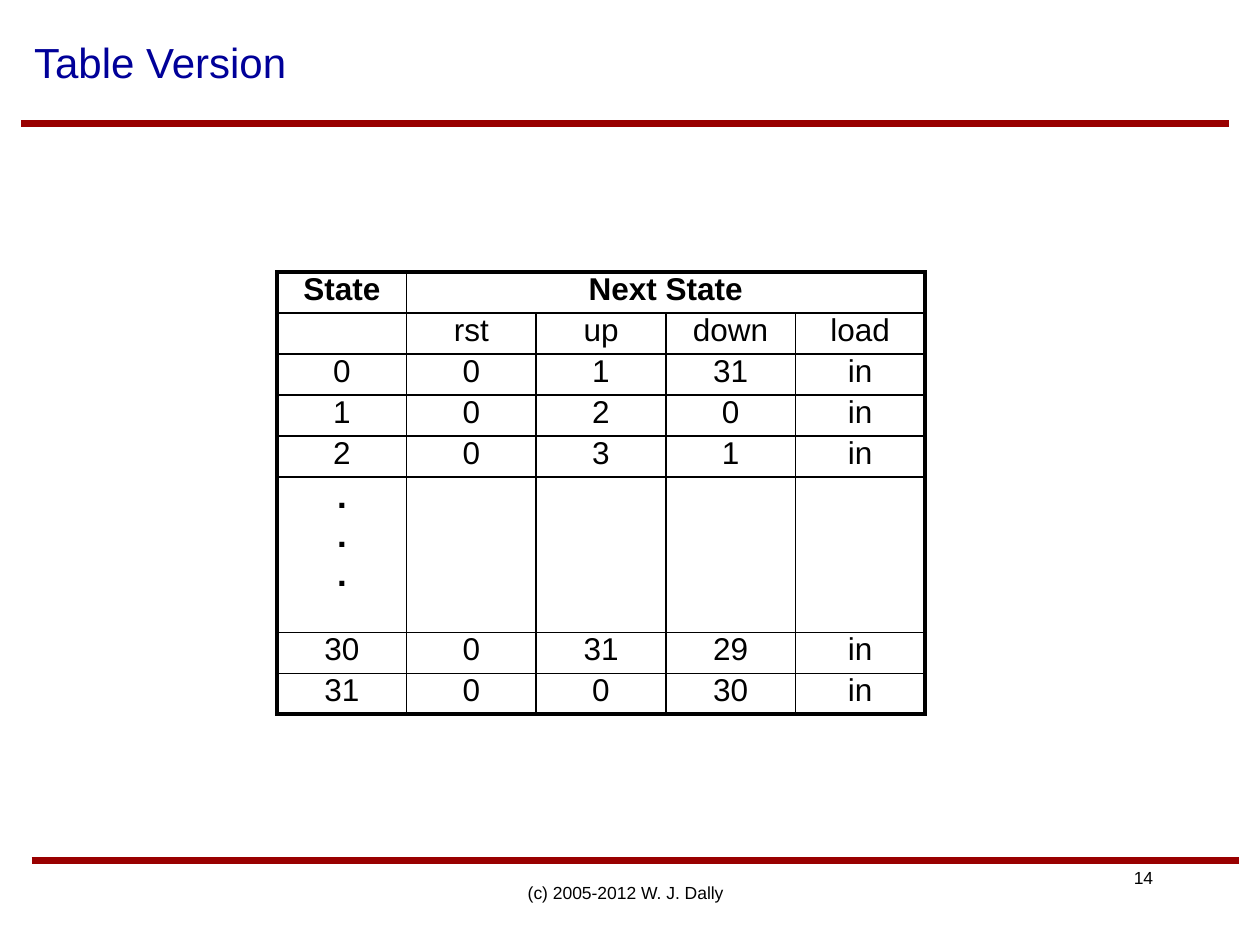
"""Build the "Table Version" slide with a counter's next-state table."""
from lxml import etree
from pptx import Presentation
from pptx.dml.color import RGBColor
from pptx.enum.shapes import MSO_CONNECTOR
from pptx.enum.text import MSO_ANCHOR, PP_ALIGN
from pptx.oxml.ns import qn
from pptx.util import Inches, Pt

LEFT, CENTER, RIGHT = PP_ALIGN.LEFT, PP_ALIGN.CENTER, PP_ALIGN.RIGHT
TOP, MIDDLE = MSO_ANCHOR.TOP, MSO_ANCHOR.MIDDLE
STRAIGHT = MSO_CONNECTOR.STRAIGHT
BLACK = RGBColor(0x00, 0x00, 0x00)
NAVY = RGBColor(0x00, 0x00, 0x99)
DARK_RED = RGBColor(0x99, 0x00, 0x00)

TITLE = ("Table Version", (0.17, 0, 9.83, 0.98))
PAGE_NUMBER = ("14", (7.5, 6.83, 1.75, 0.27), RIGHT, TOP)
COPYRIGHT = ("(c) 2005-2012 W. J. Dally", (3.38, 6.83, 3.17, 0.5), CENTER, MIDDLE)
RULES = [(0.17, 0.98), (0.25, 6.83)]
RULE_LENGTH = 9.58

STATES = [
    ("State", "Next State", "", "", ""),
    ("", "rst", "up", "down", "load"),
    ("0", "0", "1", "31", "in"),
    ("1", "0", "2", "0", "in"),
    ("2", "0", "3", "1", "in"),
    (".\n.\n.", "", "", "", ""),
    ("30", "0", "31", "29", "in"),
    ("31", "0", "0", "30", "in"),
]
HEADER_ROW, DOTS_ROW = 0, 5
TABLE_LEFT, TABLE_TOP = 2.2, 2.16
COLUMN_WIDTH, ROW_HEIGHT, DOTS_HEIGHT = 1.028, 0.325, 1.235
OUTER, INNER = Pt(2.25), Pt(1)


def write(frame, text, align, **font_values):
    frame.text = text
    for paragraph in frame.paragraphs:
        paragraph.alignment = align
        paragraph.font.color.rgb = font_values["color"]
        for run in paragraph.runs:
            run.font.color.rgb = font_values["color"]
            for key in ("name", "size", "bold"):
                setattr(run.font, key, font_values[key])


def font(size, color=BLACK, bold=False):
    return {"name": "Arial", "size": Pt(size), "color": color, "bold": bold}


def add_title(slide):
    text, place = TITLE
    title = slide.shapes.title
    for key, value in zip(("left", "top", "width", "height"), place):
        setattr(title, key, Inches(value))
    title.text_frame.vertical_anchor = MIDDLE
    write(title.text_frame, text, LEFT, **font(24, NAVY))


def add_label(slide, text, place, align, anchor):
    frame = slide.shapes.add_textbox(*map(Inches, place)).text_frame
    frame.word_wrap = True
    frame.vertical_anchor = anchor
    write(frame, text, align, **font(10))


def add_rule(slide, left, top):
    ends = (left, top, left + RULE_LENGTH, top)
    rule = slide.shapes.add_connector(STRAIGHT, *map(Inches, ends))
    rule.line.color.rgb = DARK_RED
    rule.line.width = Pt(4)
    etree.SubElement(rule._element.spPr, qn("a:effectLst"))


def set_borders(cell, widths):
    properties = cell._tc.get_or_add_tcPr()
    for position, (side, width) in enumerate(widths.items()):
        border = etree.Element(qn(f"a:ln{side}"), w=str(width))
        fill = etree.SubElement(border, qn("a:solidFill"))
        etree.SubElement(fill, qn("a:srgbClr"), val=str(BLACK))
        properties.insert(position, border)


def add_state_table(slide):
    row_count, column_count = len(STATES), len(STATES[0])
    heights = [DOTS_HEIGHT if row == DOTS_ROW else ROW_HEIGHT for row in range(row_count)]
    place = (TABLE_LEFT, TABLE_TOP, COLUMN_WIDTH * column_count, sum(heights))
    table = slide.shapes.add_table(row_count, column_count, *map(Inches, place)).table
    table.first_row = table.horz_banding = False
    for column in table.columns:
        column.width = Inches(COLUMN_WIDTH)
    for row, height in zip(table.rows, heights):
        row.height = Inches(height)
    table.cell(HEADER_ROW, 1).merge(table.cell(HEADER_ROW, column_count - 1))

    margins = dict.fromkeys(("margin_left", "margin_right", "margin_top", "margin_bottom"), 0)
    for row, texts in enumerate(STATES):
        for column, text in enumerate(texts):
            cell = table.cell(row, column)
            for key, value in margins.items():
                setattr(cell, key, value)
            cell.fill.background()
            size = 20 if row == DOTS_ROW else 18
            bold = row in (HEADER_ROW, DOTS_ROW)
            write(cell.text_frame, text, CENTER, **font(size, bold=bold))
            at_edge = {
                "L": column == 0,
                "R": column + cell.span_width == column_count,
                "T": row == 0,
                "B": row == row_count - 1,
            }
            set_borders(cell, {side: OUTER if edge else INNER for side, edge in at_edge.items()})


def main():
    presentation = Presentation()
    presentation.slide_width, presentation.slide_height = Inches(10), Inches(7.5)
    slide = presentation.slides.add_slide(presentation.slide_layouts[5])
    for left, top in RULES:
        add_rule(slide, left, top)
    for label in (PAGE_NUMBER, COPYRIGHT):
        add_label(slide, *label)
    add_title(slide)
    add_state_table(slide)
    presentation.save("out.pptx")


if __name__ == "__main__":
    main()
